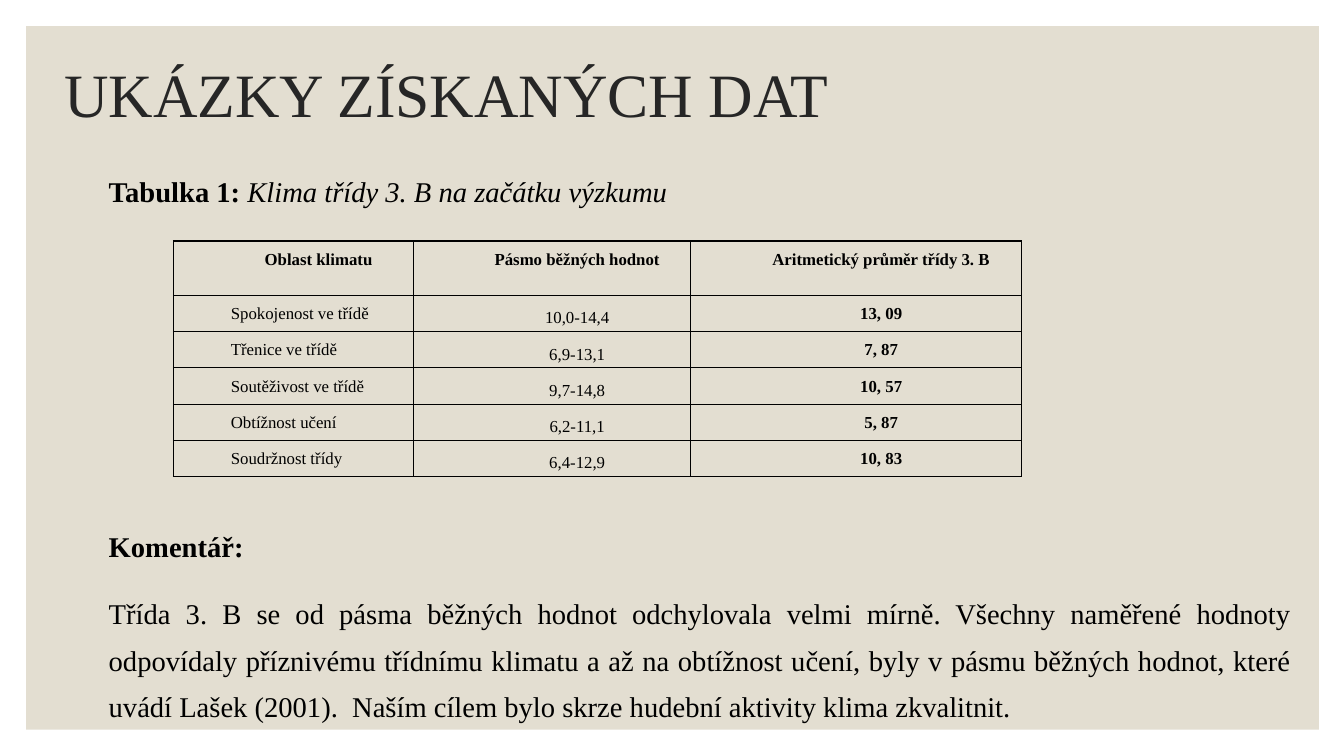
import pptx
import pptx.util
import pptx.dml.color
import pptx.enum.shapes
import pptx.enum.text
from lxml import etree

Inches, Pt = pptx.util.Inches, pptx.util.Pt
ALIGN = pptx.enum.text.PP_ALIGN
ANCHOR = pptx.enum.text.MSO_ANCHOR

# Content
TITLE = "UKÁZKY ZÍSKANÝCH DAT"
CAPTION = [("Tabulka 1: ", True, False),
           ("Klima třídy 3. B na začátku výzkumu", False, True)]
HEADERS = ("Oblast klimatu", "Pásmo běžných hodnot", "Aritmetický průměr třídy 3. B")
CLIMATE = [
    ("Spokojenost ve třídě", "10,0-14,4", "13, 09"),
    ("Třenice ve třídě", "6,9-13,1", "7, 87"),
    ("Soutěživost ve třídě", "9,7-14,8", "10, 57"),
    ("Obtížnost učení", "6,2-11,1", "5, 87"),
    ("Soudržnost třídy", "6,4-12,9", "10, 83"),
]
COMMENT_HEADING = "Komentář:"
COMMENT = ("Třída 3. B se od pásma běžných hodnot odchylovala velmi mírně. "
           "Všechny naměřené hodnoty odpovídaly příznivému třídnímu klimatu "
           "a až na obtížnost učení, byly v pásmu běžných hodnot, které uvádí "
           "Lašek (2001).  Naším cílem bylo skrze hudební aktivity klima zkvalitnit.")

# Layout and style
COLUMN_WIDTHS = (2.38, 2.75, 3.28)
HEADER_HEIGHT, ROW_HEIGHT = 0.54, 0.36
FONT, BODY_SIZE = "Times New Roman", 20.4
BLACK, TITLE_COLOR, PANEL_COLOR = "000000", "262626", "E3DED1"


def rgb(value):
    return pptx.dml.color.RGBColor.from_string(value)


def style(run, size, bold=False, italic=False, color=BLACK):
    font = run.font
    font.name, font.size, font.bold, font.italic = FONT, Pt(size), bold, italic
    font.color.rgb = rgb(color)


def add_text(slide, left, top, width, height, anchor=ANCHOR.TOP):
    frame = slide.shapes.add_textbox(*map(Inches, (left, top, width, height))).text_frame
    frame.word_wrap = True
    frame.vertical_anchor = anchor
    frame.margin_top = frame.margin_bottom = 0
    return frame


def add_borders(cell):
    properties = cell._tc.get_or_add_tcPr()
    ns = properties.nsmap["a"]
    for position, side in enumerate(("lnL", "lnR", "lnT", "lnB")):
        line = etree.Element(f"{{{ns}}}{side}", w=str(Pt(1)))
        fill = etree.SubElement(line, f"{{{ns}}}solidFill")
        etree.SubElement(fill, f"{{{ns}}}srgbClr", val=BLACK)
        properties.insert(position, line)


def fill_cell(cell, text, align, bold, anchor):
    cell.fill.background()
    add_borders(cell)
    cell.margin_left = cell.margin_right = Inches(0.07)
    cell.margin_top = cell.margin_bottom = 0
    cell.vertical_anchor = anchor
    cell.text_frame.text = text
    paragraph = cell.text_frame.paragraphs[0]
    paragraph._p.get_or_add_pPr().set("marL", str(Inches(0.5)))
    paragraph.alignment, paragraph.line_spacing = align, 1.5
    style(paragraph.runs[0], 12, bold)


def main():
    deck = pptx.Presentation()
    deck.slide_width, deck.slide_height = Inches(13.33), Inches(7.5)
    slide = deck.slides.add_slide(deck.slide_layouts[6])

    # Background panel
    panel = slide.shapes.add_shape(pptx.enum.shapes.MSO_SHAPE.RECTANGLE,
                                   *map(Inches, (0.26, 0.26, 12.82, 6.98)))
    panel.shadow.inherit = False
    panel.fill.solid()
    panel.fill.fore_color.rgb = rgb(PANEL_COLOR)
    panel.line.fill.background()

    # Title
    title = add_text(slide, 0.54, 0.22, 11, 1.5, ANCHOR.MIDDLE)
    title.text = TITLE
    title.paragraphs[0].line_spacing = 0.9
    style(title.paragraphs[0].runs[0], 44, color=TITLE_COLOR)

    # Table caption
    caption = add_text(slide, 0.98, 1.73, 11.92, 0.4).paragraphs[0]
    for text, bold, italic in CAPTION:
        run = caption.add_run()
        run.text = text
        style(run, BODY_SIZE, bold, italic)

    # Climate table
    table_height = HEADER_HEIGHT + ROW_HEIGHT * len(CLIMATE)
    table = slide.shapes.add_table(
        len(CLIMATE) + 1, len(HEADERS),
        *map(Inches, (1.72, 2.39, sum(COLUMN_WIDTHS), table_height))).table
    table.first_row = table.horz_banding = False
    for column, width in zip(table.columns, COLUMN_WIDTHS):
        column.width = Inches(width)
    for r, row in enumerate([HEADERS] + CLIMATE):
        header = r == 0
        table.rows[r].height = Inches(HEADER_HEIGHT if header else ROW_HEIGHT)
        for c, text in enumerate(row):
            fill_cell(table.cell(r, c), text,
                      align=ALIGN.CENTER if header or c > 0 else ALIGN.JUSTIFY,
                      bold=header or c == 2,
                      anchor=ANCHOR.MIDDLE if c == 1 and not header else ANCHOR.TOP)

    # Comment
    comment = add_text(slide, 0.98, 5.13, 11.92, 2)
    comment.text = f"{COMMENT_HEADING}\n{COMMENT}"
    for i, paragraph in enumerate(comment.paragraphs):
        paragraph.alignment, paragraph.line_spacing = ALIGN.JUSTIFY, 1.35
        paragraph.space_before = Pt(15 if i else 0)
        style(paragraph.runs[0], BODY_SIZE, bold=i == 0)

    deck.save("out.pptx")


if __name__ == "__main__":
    main()
